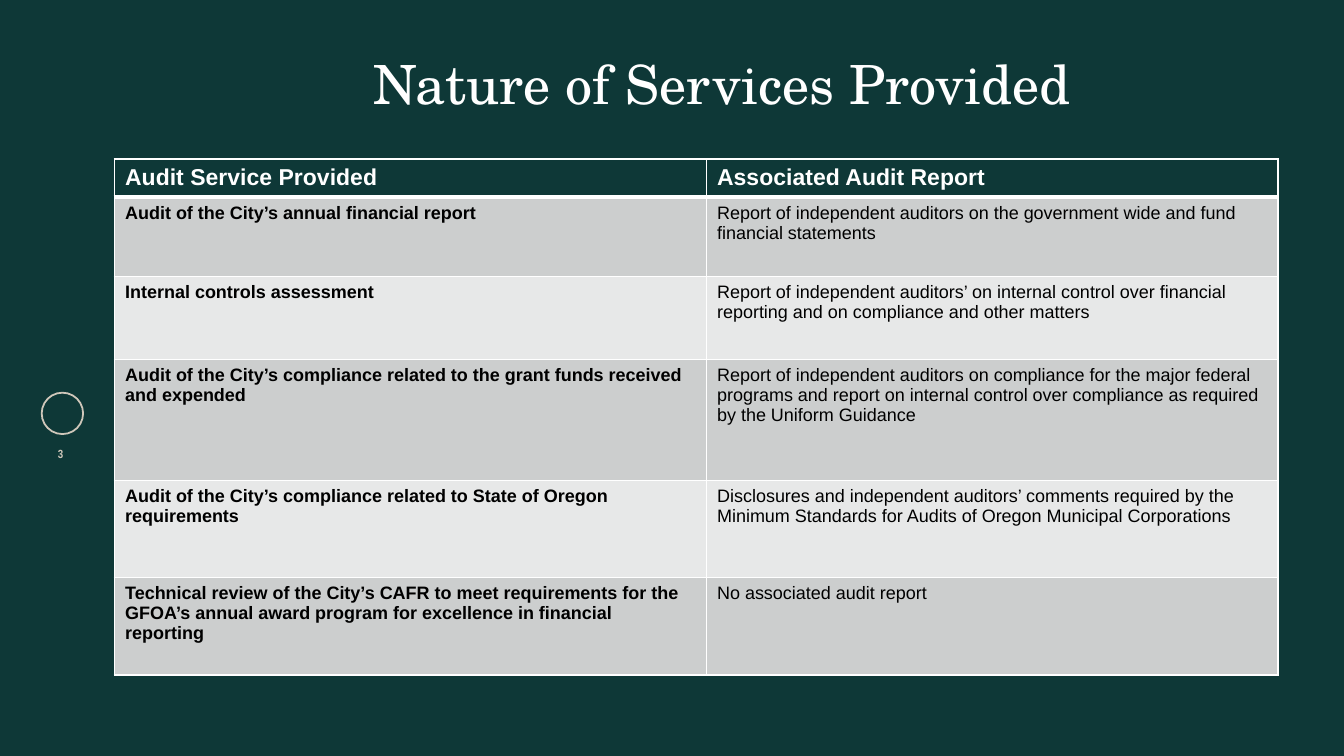
import pptx
import pptx.util
import pptx.dml.color
import pptx.enum.shapes
import pptx.enum.text
import pptx.oxml.ns
import lxml.etree

Pt = pptx.util.Pt
RGBColor = pptx.dml.color.RGBColor
PP_ALIGN = pptx.enum.text.PP_ALIGN
MSO_ANCHOR = pptx.enum.text.MSO_ANCHOR
qn = pptx.oxml.ns.qn

GREEN = RGBColor(0x0E, 0x38, 0x37)
SAND = RGBColor(0xCF, 0xC7, 0xBA)
WHITE = RGBColor(0xFF, 0xFF, 0xFF)
BLACK = RGBColor(0x00, 0x00, 0x00)
BANDS = [RGBColor(0xCC, 0xCE, 0xCE), RGBColor(0xE7, 0xE8, 0xE8)]

TITLE = "Nature of Services Provided"
PAGE = "3"
ROWS = [
    ("Audit Service Provided", "Associated Audit Report"),
    ("Audit of the City’s annual financial report",
     "Report of independent auditors on the government wide and fund financial statements"),
    ("Internal controls assessment",
     "Report of independent auditors’ on internal control over financial reporting "
     "and on compliance and other matters"),
    ("Audit of the City’s compliance related to the grant funds received and expended",
     "Report of independent auditors on compliance for the major federal programs and report "
     "on internal control over compliance as required by the Uniform Guidance"),
    ("Audit of the City’s compliance related to State of Oregon requirements",
     "Disclosures and independent auditors’ comments required by the Minimum Standards "
     "for Audits of Oregon Municipal Corporations"),
    ("Technical review of the City’s CAFR to meet requirements for the GFOA’s annual award "
     "program for excellence in financial reporting",
     "No associated audit report"),
]
COL_WIDTHS = [394.5, 381]
ROW_HEIGHTS = [25.2, 52.8, 55.5, 80.6, 64.8, 64.8]

TITLE_FONT = {"name": "TeX Gyre Schola", "size": Pt(36), "bold": False}
PAGE_FONT = {"name": "Arial Narrow", "size": Pt(7.9), "bold": True}
HEAD_FONT = {"name": "Arial", "size": Pt(15.3), "bold": True}
BODY_FONT = {"name": "Arial", "size": Pt(12)}
FRAME = {"margin_left": 0, "margin_right": 0, "margin_top": 0, "margin_bottom": 0,
         "word_wrap": True, "vertical_anchor": MSO_ANCHOR.TOP}


def apply(obj, values):
    for name, value in values.items():
        setattr(obj, name, value)


def write(tf, text, font, color, **para):
    p = tf.paragraphs[0]
    apply(p, para)
    r = p.add_run()
    r.text = text
    apply(r.font, font)
    r.font.color.rgb = color


def add_borders(cell, widths):
    tcPr = cell._tc.get_or_add_tcPr()
    for side, width in widths.items():
        ln = lxml.etree.SubElement(tcPr, qn("a:ln" + side), w=str(Pt(width)))
        fill = lxml.etree.SubElement(ln, qn("a:solidFill"))
        lxml.etree.SubElement(fill, qn("a:srgbClr"), val=str(WHITE))


prs = pptx.Presentation()
apply(prs, {"slide_width": Pt(895.68), "slide_height": Pt(504)})
s = prs.slides.add_slide(prs.slide_layouts[5])
s.background.fill.solid()
s.background.fill.fore_color.rgb = GREEN

badge = s.shapes.add_shape(pptx.enum.shapes.MSO_SHAPE.OVAL, Pt(27.8), Pt(261.8), Pt(27.6), Pt(27.6))
badge.shadow.inherit = False
badge.fill.background()
badge.line.color.rgb = SAND
badge.line.width = Pt(1.2)

page = s.shapes.add_textbox(Pt(25.2), Pt(298), Pt(30.2), Pt(27.4))
apply(page.text_frame, FRAME)
write(page.text_frame, PAGE, PAGE_FONT, SAND, alignment=PP_ALIGN.CENTER)

title = s.shapes.title
apply(title, {"left": Pt(249), "top": Pt(33.8), "width": Pt(546.5), "height": Pt(72)})
apply(title.text_frame, FRAME)
write(title.text_frame, TITLE, TITLE_FONT, WHITE, alignment=PP_ALIGN.LEFT, space_after=Pt(4))

table = s.shapes.add_table(len(ROWS), len(COL_WIDTHS), Pt(76.2), Pt(106),
                           Pt(sum(COL_WIDTHS)), Pt(sum(ROW_HEIGHTS))).table
for col, width in zip(table.columns, COL_WIDTHS):
    col.width = Pt(width)
for row, height in zip(table.rows, ROW_HEIGHTS):
    row.height = Pt(height)

for i, texts in enumerate(ROWS):
    head = i == 0
    for j, text in enumerate(texts):
        cell = table.cell(i, j)
        add_borders(cell, {"L": 1, "R": 1, "T": 3 if i == 1 else 1, "B": 3 if head else 1})
        cell.fill.solid()
        cell.fill.fore_color.rgb = GREEN if head else BANDS[(i - 1) % 2]
        font = HEAD_FONT if head else {**BODY_FONT, "bold": j == 0}
        write(cell.text_frame, text, font, WHITE if head else BLACK)

prs.save("out.pptx")
